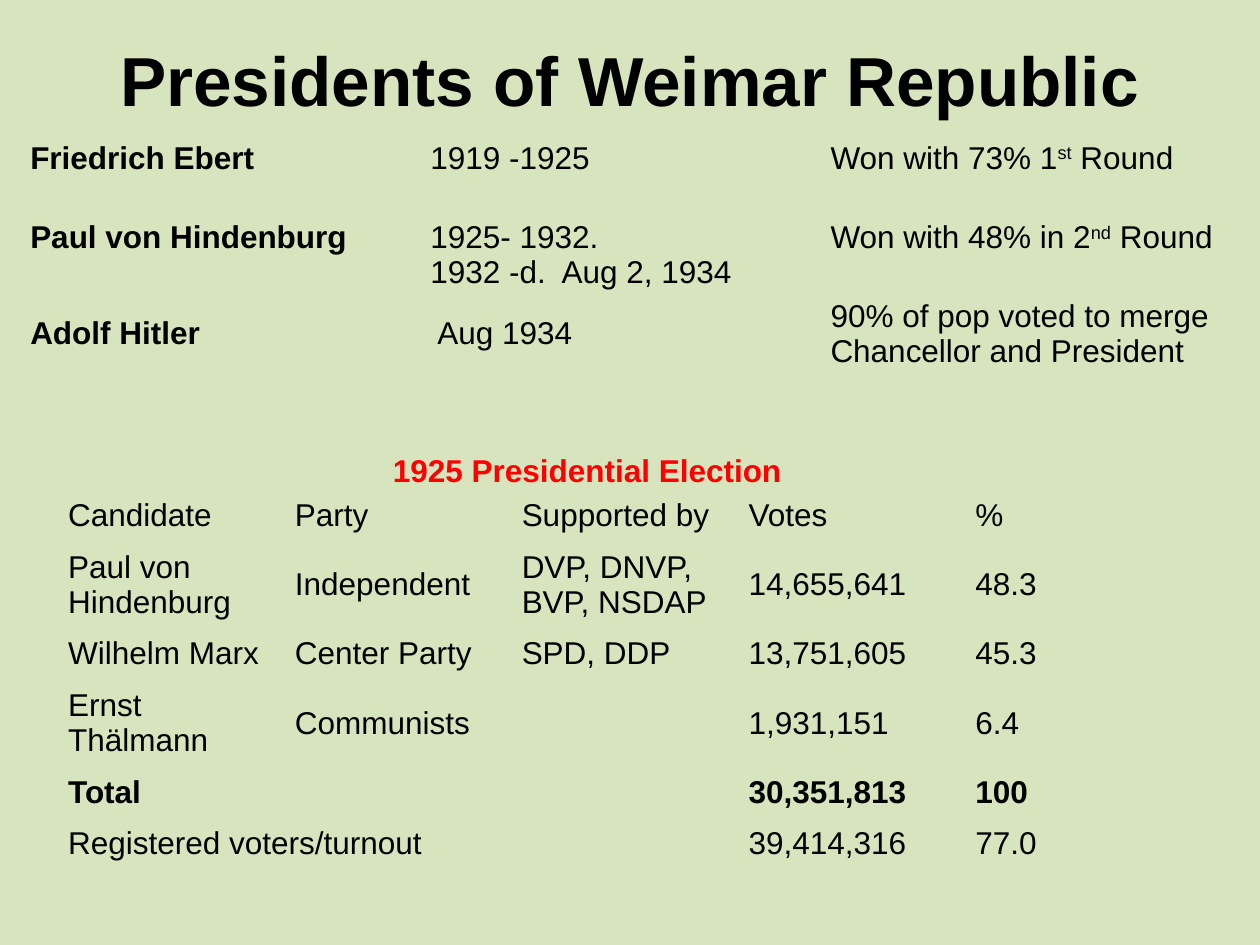
from pptx import Presentation
from pptx.dml.color import RGBColor
from pptx.enum.text import MSO_ANCHOR, PP_ALIGN
from pptx.util import Cm, Pt

LEFT, MID = PP_ALIGN.LEFT, PP_ALIGN.CENTER
TOP, CENTRE = MSO_ANCHOR.TOP, MSO_ANCHOR.MIDDLE

GREEN = RGBColor(0xD7, 0xE4, 0xBD)
BLACK = RGBColor(0, 0, 0)
RED = RGBColor(0xFF, 0, 0)
PLAIN = "{2D5ABB26-0587-4C30-8999-92F81FD0307C}"  # table style without grid

# "^" marks the start and end of raised text
TERMS = [
    ("Friedrich Ebert", "1919 -1925", "Won with 73% 1^st^ Round"),
    ("Paul von Hindenburg", "1925- 1932.\n1932 -d.  Aug 2, 1934",
     "Won with 48% in 2^nd^ Round"),
    ("Adolf Hitler", " Aug 1934",
     "90% of pop voted to merge Chancellor and President"),
]
VOTES = [
    ("Candidate", "Party", "Supported by", "Votes", "%"),
    ("Paul von Hindenburg", "Independent", "DVP, DNVP, BVP, NSDAP",
     "14,655,641", "48.3"),
    ("Wilhelm Marx", "Center Party", "SPD, DDP", "13,751,605", "45.3"),
    ("Ernst Thälmann", "Communists", "", "1,931,151", "6.4"),
    ("Total", "", "", "30,351,813", "100"),
    ("Registered voters/turnout", "", "", "39,414,316", "77.0"),
    ("", "", "", "", ""),
]


def write(frame, text, size=18, bold=False, color=BLACK, align=LEFT):
    """Fill a text frame, one paragraph for each line."""
    for i, line in enumerate(text.split("\n")):
        para = frame.add_paragraph() if i else frame.paragraphs[0]
        para.alignment = align
        for j, part in enumerate(line.split("^")):
            if not part:
                continue
            run = para.add_run()
            run.text = part
            font = run.font
            font.name, font.size, font.bold = "Arial", Pt(size), bold
            font.color.rgb = color
            if j % 2:
                run._r.get_or_add_rPr().set("baseline", "30000")


def add_label(slide, box, text, anchor=TOP, inset=None, **form):
    """Text box with wrapped text."""
    frame = slide.shapes.add_textbox(*map(Cm, box)).text_frame
    frame.word_wrap = True
    frame.vertical_anchor = anchor
    if inset is not None:
        frame.margin_top = frame.margin_bottom = Cm(inset)
    write(frame, text, **form)


def add_grid(slide, box, rows, heights, is_bold, inset=None):
    """Unfilled table with equal columns."""
    shape = slide.shapes.add_table(len(rows), len(rows[0]), *map(Cm, box))
    table = shape.table
    table.first_row = table.horz_banding = False
    table._tbl.tblPr.find("{*}tableStyleId").text = PLAIN
    for col in table.columns:
        col.width = Cm(box[2] / len(rows[0]))
    for r, (row, height) in enumerate(zip(rows, heights)):
        table.rows[r].height = Cm(height)
        for c, text in enumerate(row):
            cell = table.cell(r, c)
            cell.fill.background()
            cell.vertical_anchor = CENTRE
            if inset is not None:
                cell.margin_left = cell.margin_right = Cm(inset)
                cell.margin_top = cell.margin_bottom = Cm(inset)
            write(cell.text_frame, text, bold=is_bold(r, c))
    return table


def add_terms(slide, box):
    """Presidents with their terms and results."""
    table = add_grid(slide, box, TERMS, (0.94, 2.16, 1.55),
                     lambda r, c: c == 0, inset=0.03)
    table.cell(1, 1).margin_top = Cm(0.72)  # dates sit one line lower


def add_votes(slide, box):
    """Election caption with the result table below it."""
    left, top, width, height = box
    add_label(slide, (left + 6.55, top, 12.9, 1.02),
              "1925 Presidential Election", bold=True, color=RED)
    one, two = 0.97, 1.66  # heights of rows with one and two lines
    heights = (one, two, one, two, one, one, one)
    table = add_grid(slide, (left, top + 0.91, width, height - 0.91), VOTES,
                     heights, lambda r, c: r == 4)
    for r, last in ((4, 2), (5, 2), (6, 4)):
        table.cell(r, 0).merge(table.cell(r, last))


def main():
    deck = Presentation()
    deck.slide_width, deck.slide_height = Cm(25.4), Cm(19.05)
    slide = deck.slides.add_slide(deck.slide_layouts[6])
    fill = slide.background.fill
    fill.solid()
    fill.fore_color.rgb = GREEN

    add_label(slide, (1.27, 0.76, 22.86, 3.18), "Presidents of Weimar Republic",
              inset=0, size=39.6, bold=True, align=MID)
    add_terms(slide, (0.58, 2.72, 24.2, 4.65))
    add_votes(slide, (1.12, 8.97, 22.86, 9.08))
    deck.save("out.pptx")


if __name__ == "__main__":
    main()
